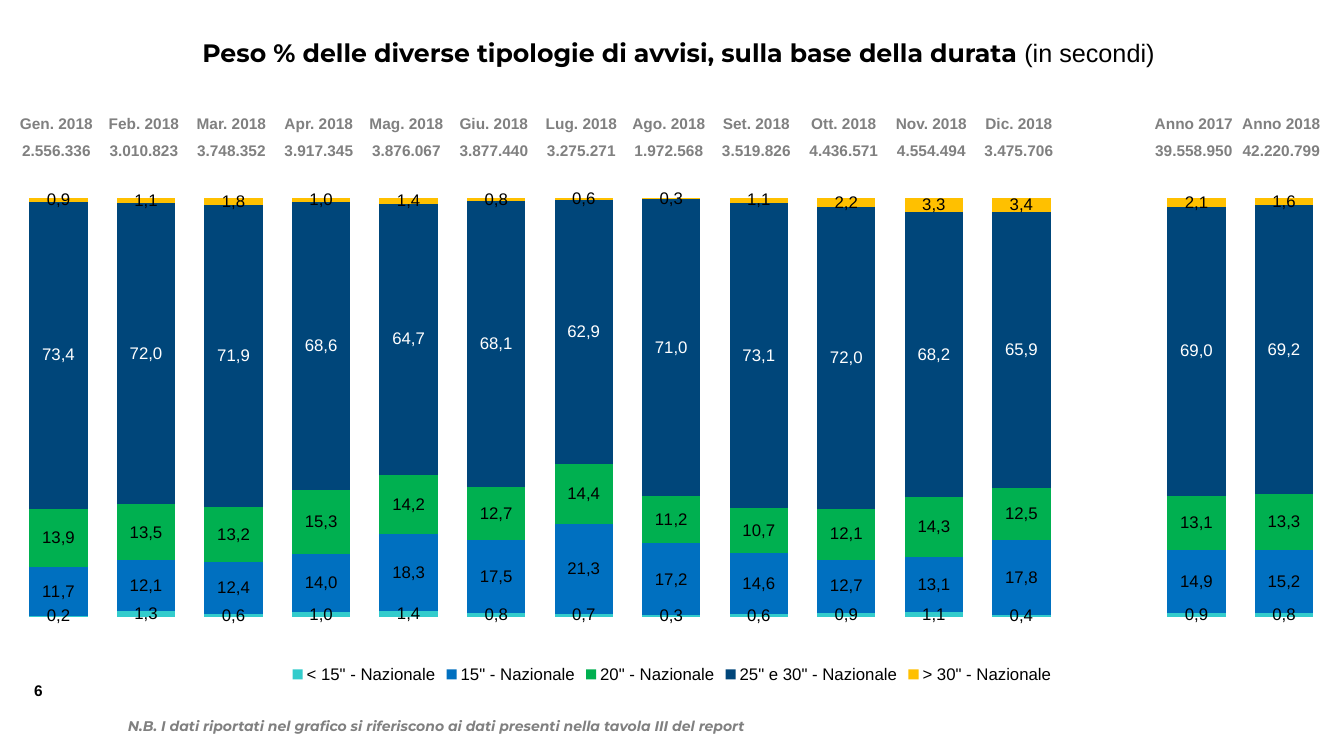
"""Build the slide on the share of advertisements by duration."""
from lxml.etree import SubElement
from pptx import Presentation
from pptx.chart.data import CategoryChartData
from pptx.dml.color import RGBColor
from pptx.enum.chart import XL_CHART_TYPE as ChartType
from pptx.enum.chart import XL_LABEL_POSITION as LabelPosition
from pptx.enum.chart import XL_LEGEND_POSITION as LegendPosition
from pptx.enum.shapes import MSO_SHAPE as Preset
from pptx.enum.text import MSO_ANCHOR as Anchor
from pptx.enum.text import PP_ALIGN as Align
from pptx.oxml.ns import qn
from pptx.util import Inches, Pt

WIDTH, HEIGHT = Inches(13.33), Inches(7.5)
COLORS = {
    "white": "FFFFFF", "black": "000000", "grey": "808080", "teal": "33CCCC",
    "blue": "0070C0", "green": "00B050", "navy": "00467A", "amber": "FFC000",
}
FIRST_CENTER, COLUMN_STEP, HEADING_WIDTH = 4.2, 6.51, 8.2
PLOT_LAYOUT = {"x": 0.011, "y": 0.059, "w": 0.977, "h": 0.805}
HEADINGS = [
    ("Gen. 2018", "2.556.336"), ("Feb. 2018", "3.010.823"),
    ("Mar. 2018", "3.748.352"), ("Apr. 2018", "3.917.345"),
    ("Mag. 2018", "3.876.067"), ("Giu. 2018", "3.877.440"),
    ("Lug. 2018", "3.275.271"), ("Ago. 2018", "1.972.568"),
    ("Set. 2018", "3.519.826"), ("Ott. 2018", "4.436.571"),
    ("Nov. 2018", "4.554.494"), ("Dic. 2018", "3.475.706"),
    None, ("Anno 2017", "39.558.950"), ("Anno 2018", "42.220.799"),
]
SERIES = [
    ('< 15" - Nazionale', "teal", "black",
     [0.002, 0.013, 0.006, 0.01, 0.014, 0.008, 0.007, 0.003, 0.006, 0.009,
      0.011, 0.004, None, 0.009, 0.008]),
    ('15" - Nazionale', "blue", "black",
     [0.117, 0.121, 0.124, 0.14, 0.183, 0.175, 0.213, 0.172, 0.146, 0.127,
      0.131, 0.178, None, 0.149, 0.152]),
    ('20" - Nazionale', "green", "black",
     [0.139, 0.135, 0.132, 0.153, 0.142, 0.127, 0.144, 0.112, 0.107, 0.121,
      0.143, 0.125, None, 0.131, 0.133]),
    ('25" e 30" - Nazionale', "navy", "white",
     [0.734, 0.72, 0.719, 0.686, 0.647, 0.681, 0.629, 0.71, 0.731, 0.72,
      0.682, 0.659, None, 0.69, 0.692]),
    ('> 30" - Nazionale', "amber", "black",
     [0.009, 0.011, 0.018, 0.01, 0.014, 0.008, 0.006, 0.003, 0.011, 0.022,
      0.033, 0.034, None, 0.021, 0.016]),
]


def place(left, top, width, height):
    """Turn percentages of the slide into lengths."""
    return (int(WIDTH * left / 100), int(HEIGHT * top / 100),
            int(WIDTH * width / 100), int(HEIGHT * height / 100))


def rgb(name):
    """Look up a named colour."""
    return RGBColor.from_string(COLORS[name])


def style_font(font, size, color, name="Arial", bold=False, italic=False):
    """Set the look of a font."""
    font.size, font.name, font.bold, font.italic = Pt(size), name, bold, italic
    font.color.rgb = rgb(color)


def add_run(paragraph, text, *look, **emphasis):
    """Append one styled run."""
    run = paragraph.add_run()
    run.text = text
    style_font(run.font, *look, **emphasis)


def add_text_box(slide, area, wrap=True):
    """Add an empty text box and return its text frame."""
    frame = slide.shapes.add_textbox(*place(*area)).text_frame
    frame.word_wrap = wrap
    return frame


def add_title(slide):
    """Add the title on its white rectangle."""
    shape = slide.shapes.add_shape(Preset.RECTANGLE, *place(11.63, 4.27, 77.7, 5.33))
    shape.shadow.inherit = False
    shape.fill.solid()
    shape.fill.fore_color.rgb = rgb("white")
    shape.line.fill.background()
    shape.text_frame.word_wrap = True
    shape.text_frame.vertical_anchor = Anchor.MIDDLE
    paragraph = shape.text_frame.paragraphs[0]
    paragraph.alignment = Align.CENTER
    add_run(paragraph, "Peso % delle diverse tipologie di avvisi, sulla base della durata ",
            18, "black", "Montserrat", bold=True)
    add_run(paragraph, "(in secondi)", 18, "black")


def add_heading(slide, index, period, total):
    """Add the period and its total above one column."""
    left = FIRST_CENTER + index * COLUMN_STEP - HEADING_WIDTH / 2
    frame = add_text_box(slide, (left, 14.4, HEADING_WIDTH, 7.5))
    total_paragraph = frame.add_paragraph()
    total_paragraph.space_before = Pt(6)
    for paragraph, text in zip(frame.paragraphs, (period, total)):
        paragraph.alignment = Align.CENTER
        add_run(paragraph, text, 11, "grey", bold=True)


def set_plot_layout(chart):
    """Fix the inner plot area as shares of the chart."""
    plot_area = chart.plots[0]._element.getparent()
    for old_layout in plot_area.findall(qn("c:layout")):
        plot_area.remove(old_layout)
    layout = SubElement(plot_area, qn("c:layout"))
    plot_area.insert(0, layout)
    manual = SubElement(layout, qn("c:manualLayout"))
    settings = {"layoutTarget": "inner", "xMode": "edge", "yMode": "edge", **PLOT_LAYOUT}
    for tag, value in settings.items():
        SubElement(manual, qn(f"c:{tag}")).set("val", str(value))


def style_series(series, fill, label_color, values):
    """Colour one series and label its points with decimal commas."""
    series.format.fill.solid()
    series.format.fill.fore_color.rgb = rgb(fill)
    labels = series.data_labels
    labels.show_value = True
    labels.number_format, labels.number_format_is_linked = "0.0%", False
    labels.position = LabelPosition.CENTER
    style_font(labels.font, 12, label_color, bold=True)
    for index, value in enumerate(values):
        if value is not None:
            label = series.points[index].data_label
            text = f"{value * 100:.1f}".replace(".", ",")
            add_run(label.text_frame.paragraphs[0], text, 12, label_color)
            label.position = LabelPosition.CENTER


def add_duration_chart(slide):
    """Add the stacked columns of durations."""
    data = CategoryChartData(number_format="0.0%")
    data.categories = [str(number) for number in range(1, len(HEADINGS) + 1)]
    for name, _, _, values in SERIES:
        data.add_series(name, values)
    chart = slide.shapes.add_chart(
        ChartType.COLUMN_STACKED_100, *place(0, 22.13, 100, 68.8), data).chart
    style_font(chart.font, 10, "black", "DejaVu Sans")
    chart.has_title = False
    chart.has_legend = True
    chart.legend.position = LegendPosition.BOTTOM
    chart.legend.include_in_layout = False
    style_font(chart.legend.font, 12, "black")
    chart.value_axis.has_major_gridlines = False
    chart.value_axis.visible = chart.category_axis.visible = False
    plot = chart.plots[0]
    plot.gap_width, plot.overlap, plot.vary_by_categories = 50, 100, False
    for series, (_, fill, label_color, values) in zip(plot.series, SERIES):
        style_series(series, fill, label_color, values)
    set_plot_layout(chart)


def main():
    """Assemble and save the slide."""
    presentation = Presentation()
    presentation.slide_width, presentation.slide_height = WIDTH, HEIGHT
    slide = presentation.slides.add_slide(presentation.slide_layouts[6])
    number = add_text_box(slide, (1.8, 89.47, 3.15, 3.87), wrap=False)
    add_run(number.paragraphs[0], "6", 11, "black", bold=True)
    add_title(slide)
    note = add_text_box(slide, (8.78, 94.27, 60.47, 3.6))
    add_run(note.paragraphs[0],
            "N.B. I dati riportati nel grafico si riferiscono ai dati presenti "
            "nella tavola III del report",
            10, "grey", "Montserrat", bold=True, italic=True)
    for index, heading in enumerate(HEADINGS):
        if heading:
            add_heading(slide, index, *heading)
    add_duration_chart(slide)
    presentation.save("out.pptx")


if __name__ == "__main__":
    main()
